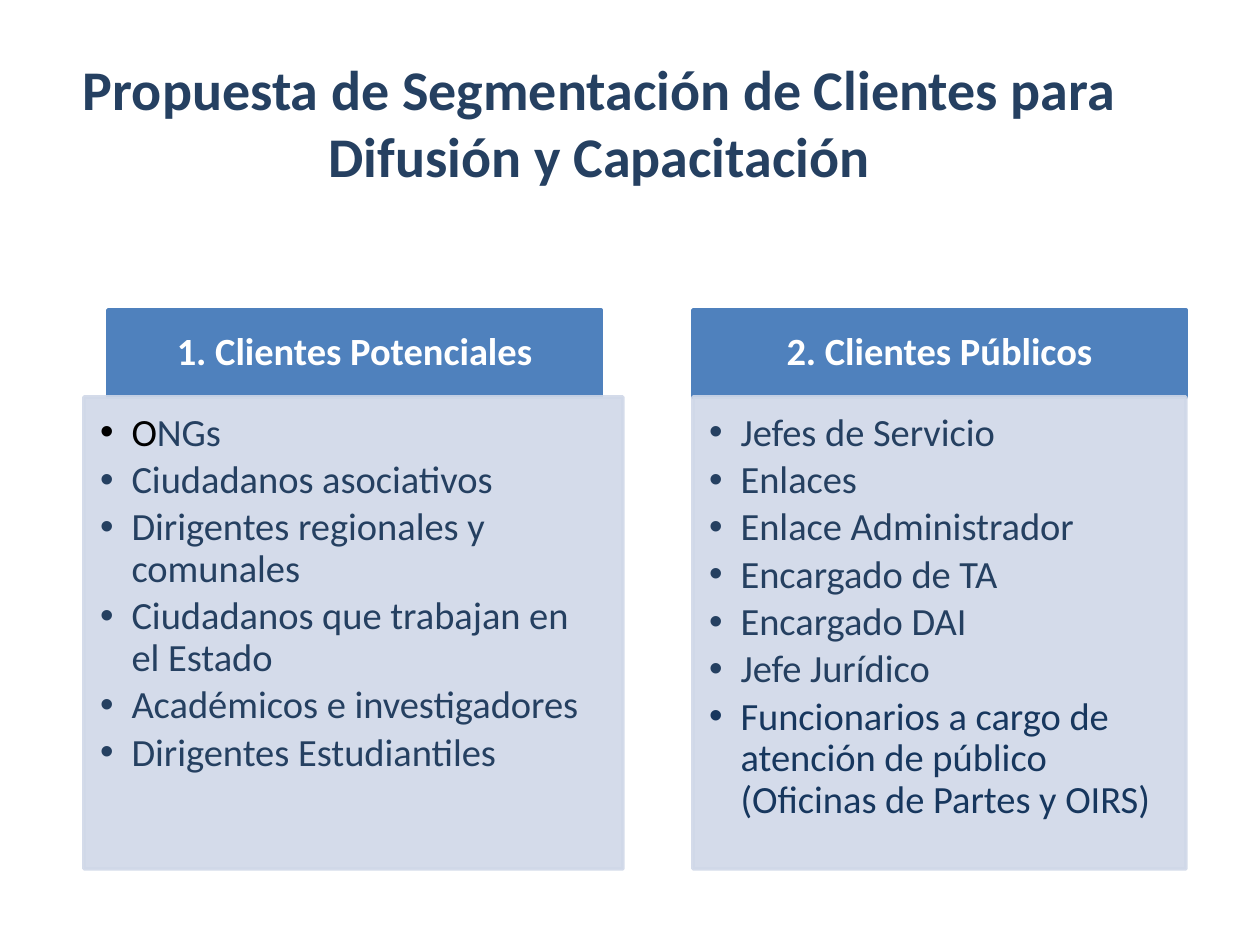
from dataclasses import dataclass

from lxml import etree
from pptx import Presentation
from pptx import util as u
from pptx.dml.color import RGBColor
from pptx.enum import text
from pptx.oxml.ns import qn

PX = u.Inches(1) / 126


@dataclass(frozen=True)
class Theme:
    font: str = "Calibri"
    title_size: int = 32
    text_size: int = 22
    navy: str = "254061"
    deep_navy: str = "17375E"
    black: str = "000000"
    white: str = "FFFFFF"
    header: str = "4F81BD"
    panel: str = "D0D8E8"
    panel_opacity: int = 90


THEME = Theme()
HEADER_TOP, HEADER_HEIGHT = 310, 87
PANEL_TOP, PANEL_HEIGHT = 397, 472

SEGMENTS = [
    {
        "heading": "1. Clientes Potenciales",
        "header_span": (108, 493),
        "panel_span": (84, 539),
        "items": [
            [("O", THEME.black), ("NGs", THEME.navy)],
            [("Ciudadanos asociativos", THEME.navy)],
            [("Dirigentes regionales y comunales", THEME.navy)],
            [("Ciudadanos que trabajan en el Estado", THEME.navy)],
            [("Académicos e investigadores", THEME.navy)],
            [("Dirigentes Estudiantiles", THEME.navy)],
        ],
    },
    {
        "heading": "2. Clientes Públicos",
        "header_span": (693, 493),
        "panel_span": (693, 493),
        "items": [
            [("Jefes de Servicio", THEME.navy)],
            [("Enlaces", THEME.navy)],
            [("Enlace Administrador", THEME.navy)],
            [("Encargado de TA", THEME.navy)],
            [("Encargado DAI", THEME.navy)],
            [("Jefe Jurídico", THEME.navy)],
            [("Funcionarios a cargo de atención de público "
              "(Oficinas de Partes y OIRS)", THEME.deep_navy)],
        ],
    },
]


def px(length):
    return u.Emu(round(length * PX))


def apply(target, values):
    for name, value in values.items():
        setattr(target, name, value)


def place(box, left, top, width, height, margins, anchor):
    apply(box, dict(left=px(left), top=px(top), width=px(width), height=px(height)))
    sides = ("margin_left", "margin_top", "margin_right", "margin_bottom")
    apply(box.text_frame, {side: px(size) for side, size in zip(sides, margins)})
    apply(box.text_frame, dict(word_wrap=True, vertical_anchor=anchor,
                               auto_size=text.MSO_AUTO_SIZE.NONE))


def paint(box, color, opacity=100):
    box.line.width = u.Pt(2)
    for fill in (box.fill, box.line.fill):
        fill.solid()
        fill.fore_color.rgb = RGBColor.from_string(color)
    if opacity < 100:
        for tint in box._element.spPr.iter(qn("a:srgbClr")):
            etree.SubElement(tint, qn("a:alpha"), val=str(opacity * 1000))


def write(para, spans, size, bold=False, **layout):
    apply(para, layout)
    for words, color in spans:
        span = para.add_run()
        span.text = words
        apply(span.font, dict(name=THEME.font, size=u.Pt(size), bold=bold))
        span.font.color.rgb = RGBColor.from_string(color)


def add_title(box, words):
    place(box, 64, 86, 1071, 139, (13, 6, 13, 73), text.MSO_ANCHOR.MIDDLE)
    write(box.text_frame.paragraphs[0], [(words, THEME.navy)], THEME.title_size,
          bold=True, alignment=text.PP_ALIGN.CENTER)


def add_heading(box, words, left, width):
    place(box, left, HEADER_TOP, width, HEADER_HEIGHT, (21, 13, 21, 13),
          text.MSO_ANCHOR.MIDDLE)
    paint(box, THEME.header)
    write(box.text_frame.paragraphs[0], [(words, THEME.white)], THEME.text_size,
          bold=True, alignment=text.PP_ALIGN.CENTER, line_spacing=0.9,
          space_before=u.Pt(0))


def add_list(box, items, left, width):
    place(box, left, PANEL_TOP, width, PANEL_HEIGHT, (16, 16, 21, 24),
          text.MSO_ANCHOR.TOP)
    paint(box, THEME.panel, THEME.panel_opacity)
    frame = box.text_frame
    for number, spans in enumerate(items):
        para = frame.add_paragraph() if number else frame.paragraphs[0]
        write(para, spans, THEME.text_size, line_spacing=0.9,
              space_before=u.Pt(0), space_after=u.Pt(0.15 * THEME.text_size))
        indent = u.Inches(0.25)
        properties = para._p.get_or_add_pPr()
        properties.set("marL", str(indent))
        properties.set("indent", str(-indent))


def main():
    deck = Presentation()
    apply(deck, dict(slide_width=u.Inches(10), slide_height=u.Inches(7.5)))
    page = deck.slides.add_slide(deck.slide_layouts.get_by_name("Comparison"))
    title, *boxes = page.placeholders
    add_title(title, "Propuesta de Segmentación de Clientes para Difusión y Capacitación")
    for segment, heading, panel in zip(SEGMENTS, boxes[::2], boxes[1::2]):
        add_heading(heading, segment["heading"], *segment["header_span"])
        add_list(panel, segment["items"], *segment["panel_span"])
    deck.save("out.pptx")


if __name__ == "__main__":
    main()
